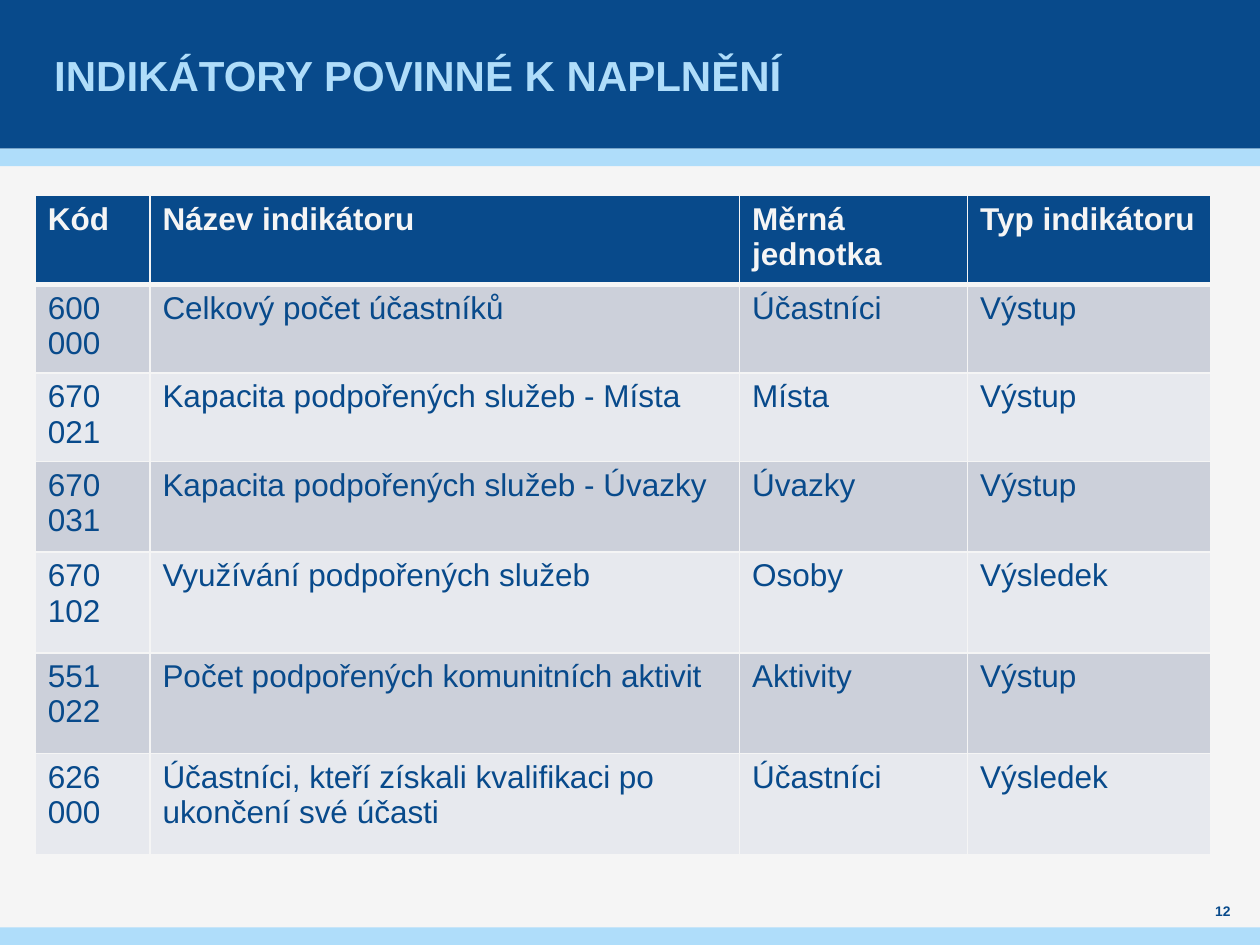
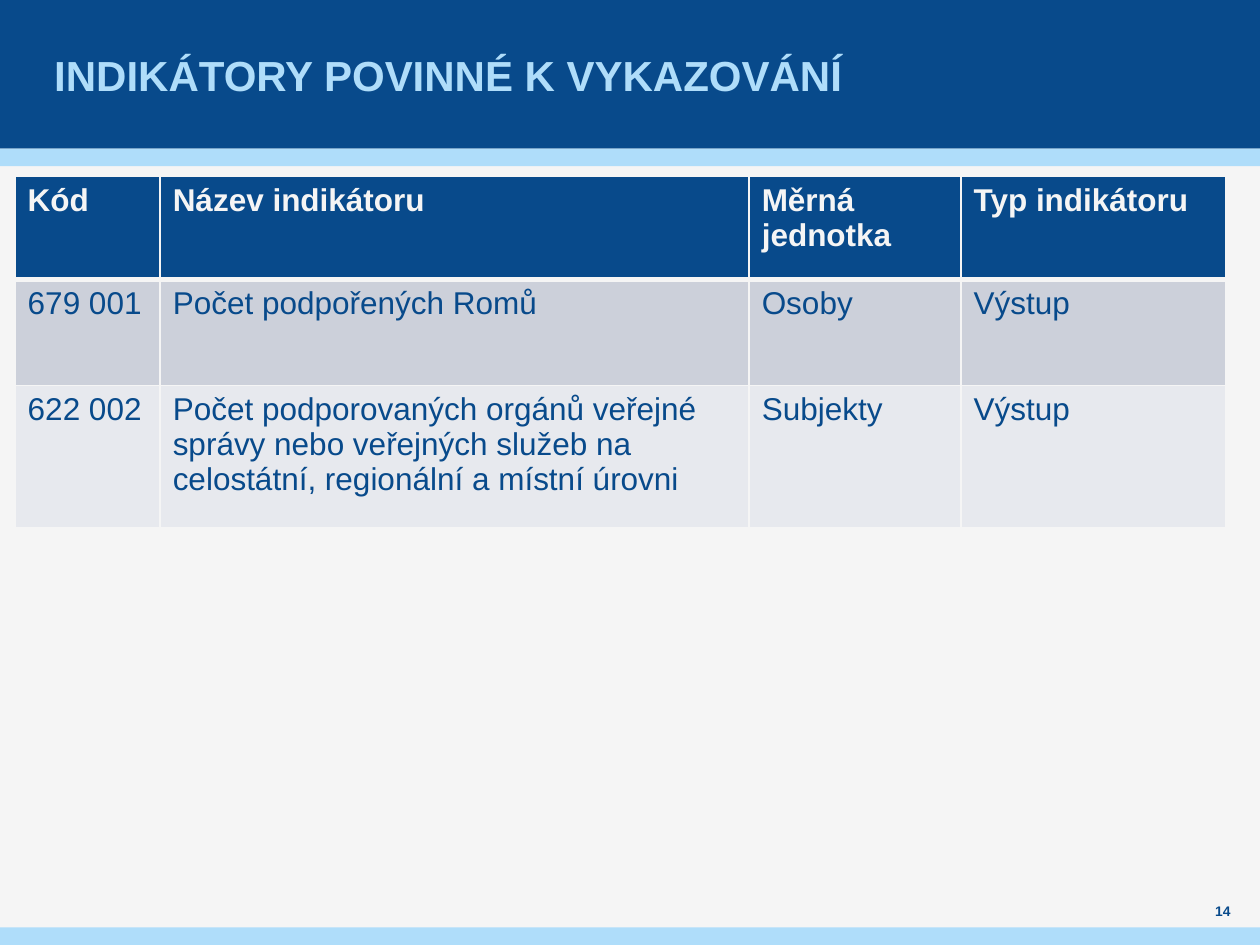
from collections import namedtuple

from lxml.etree import SubElement
from pptx import Presentation
from pptx.dml.color import RGBColor
from pptx.enum.shapes import MSO_SHAPE as Shape
from pptx.enum.text import MSO_ANCHOR as Anchor, PP_ALIGN as Align
from pptx.oxml.ns import qn
from pptx.util import Inches, Pt

NAVY = RGBColor(0x08, 0x4A, 0x8B)
SKY = RGBColor(0xAF, 0xDD, 0xFA)
PAPER = RGBColor(0xF5, 0xF5, 0xF5)
ROW_DARK = RGBColor(0xCC, 0xD0, 0xDA)
ROW_LIGHT = RGBColor(0xE7, 0xE9, 0xEE)
FONT = "Arial"
PAGE_WIDTH, PAGE_HEIGHT = Inches(10), Inches(7.5)

# Boxes are given in percent of the slide's width and height
Box = namedtuple("Box", "left top width height")
HEADER = Box(0, 0, 100, 15.73)
HEADER_RULE = Box(0, 15.73, 100, 1.87)
FOOTER = Box(0, 98.13, 100, 1.87)
TITLE = Box(3.9, 0, 92.1, 15.73)
PAGE_NUMBER = Box(94.5, 95.07, 5.1, 2.67)

HEADINGS = ("Kód", "Název indikátoru", "Měrná jednotka", "Typ indikátoru")

# Column and row sizes are weights that share out the table's box
REQUIRED = {
    "title": "INDIKÁTORY POVINNÉ K NAPLNĚNÍ",
    "number": 12,
    "box": Box(2.8, 20.67, 93.3, 68.27),
    "columns": (0.91, 4.68, 1.81, 1.93),
    "rows": (0.71, 0.69, 0.6, 0.72, 0.8, 0.8, 0.8),
    "indicators": (
        ("600 000", "Celkový počet účastníků", "Účastníci", "Výstup"),
        ("670 021", "Kapacita podpořených služeb - Místa", "Místa", "Výstup"),
        ("670 031", "Kapacita podpořených služeb - Úvazky", "Úvazky", "Výstup"),
        ("670 102", "Využívání podpořených služeb", "Osoby", "Výsledek"),
        ("551 022", "Počet podpořených komunitních aktivit", "Aktivity", "Výstup"),
        ("626 000", "Účastníci, kteří získali kvalifikaci po ukončení své účasti",
         "Účastníci", "Výsledek"),
    ),
}
REPORTED = {
    "title": "INDIKÁTORY POVINNÉ K VYKAZOVÁNÍ",
    "number": 14,
    "box": Box(1.2, 18.67, 96.1, 37.2),
    "columns": (1.15, 4.67, 1.68, 2.1),
    "rows": (0.82, 0.84, 1.13),
    "indicators": (
        ("679 001", "Počet podpořených Romů", "Osoby", "Výstup"),
        ("622 002", "Počet podporovaných orgánů veřejné správy nebo veřejných "
         "služeb na celostátní, regionální a místní úrovni", "Subjekty", "Výstup"),
    ),
}


def place(box):
    """Turn a box in percent into left, top, width and height."""
    return [round(share * size / 100)
            for share, size in zip(box, (PAGE_WIDTH, PAGE_HEIGHT) * 2)]


def style_paragraph(para, size, color, bold, align=Align.LEFT):
    para.alignment = align
    font = para.font
    font.name, font.size, font.bold = FONT, Pt(size), bold
    font.color.rgb = color


def fill_frame(frame, text, side_inset, *style):
    frame.word_wrap = True
    frame.vertical_anchor = Anchor.MIDDLE
    frame.margin_left = frame.margin_right = Inches(side_inset)
    frame.margin_top = frame.margin_bottom = 0
    frame.text = text
    style_paragraph(frame.paragraphs[0], *style)


def share_out(total, weights, parts):
    for part, weight in zip(parts, weights):
        yield part, round(total * weight / sum(weights))


def set_borders(cell, **widths):
    properties = cell._tc.get_or_add_tcPr()
    for side in "LRTB":
        line = SubElement(properties, qn(f"a:ln{side}"), w=str(Pt(widths.get(side, 1))))
        fill = SubElement(line, qn("a:solidFill"))
        SubElement(fill, qn("a:srgbClr"), val=str(PAPER))


def add_master_bands(deck, page):
    """Draw the bands once and hand them to the slide master."""
    master = deck.slide_master
    master.background.fill.solid()
    master.background.fill.fore_color.rgb = PAPER
    for box, color in ((HEADER_RULE, SKY), (HEADER, NAVY), (FOOTER, SKY)):
        band = page.shapes.add_shape(Shape.RECTANGLE, *place(box))
        band.shadow.inherit = False
        band.fill.solid()
        band.fill.fore_color.rgb = color
        band.line.fill.background()
        master.shapes.element.insert(2, band.element)


def add_title(page, box, text):
    title = page.shapes.title
    title.left, title.top, title.width, title.height = place(box)
    fill_frame(title.text_frame, text, 0.04, 24, SKY, True)


def add_page_number(page, box, number):
    frame = page.shapes.add_textbox(*place(box)).text_frame
    fill_frame(frame, str(number), 0, 7.9, NAVY, True, Align.CENTER)


def add_indicator_table(page, box, columns, rows, indicators):
    left, top, width, height = place(box)
    table = page.shapes.add_table(
        len(rows), len(columns), left, top, width, height).table
    for column, size in share_out(width, columns, table.columns):
        column.width = size
    for row, size in share_out(height, rows, table.rows):
        row.height = size

    for index, texts in enumerate((HEADINGS, *indicators)):
        heading = index == 0
        fill = NAVY if heading else (ROW_LIGHT, ROW_DARK)[index % 2]
        for cell, text in zip(table.rows[index].cells, texts):
            # The line below the headings is the thick one
            set_borders(cell, T=3 if index == 1 else 1, B=3 if heading else 1)
            cell.fill.solid()
            cell.fill.fore_color.rgb = fill
            cell.text = text
            style_paragraph(cell.text_frame.paragraphs[0], 18,
                            PAPER if heading else NAVY, heading)


def add_indicator_slide(deck, content):
    page = deck.slides.add_slide(deck.slide_layouts.get_by_name("Title Only"))
    add_title(page, TITLE, content["title"])
    add_page_number(page, PAGE_NUMBER, content["number"])
    add_indicator_table(page, content["box"], content["columns"],
                        content["rows"], content["indicators"])
    return page


def main():
    deck = Presentation()
    deck.slide_width, deck.slide_height = PAGE_WIDTH, PAGE_HEIGHT
    pages = [add_indicator_slide(deck, content) for content in (REQUIRED, REPORTED)]
    add_master_bands(deck, pages[0])
    deck.save("out.pptx")


if __name__ == "__main__":
    main()
